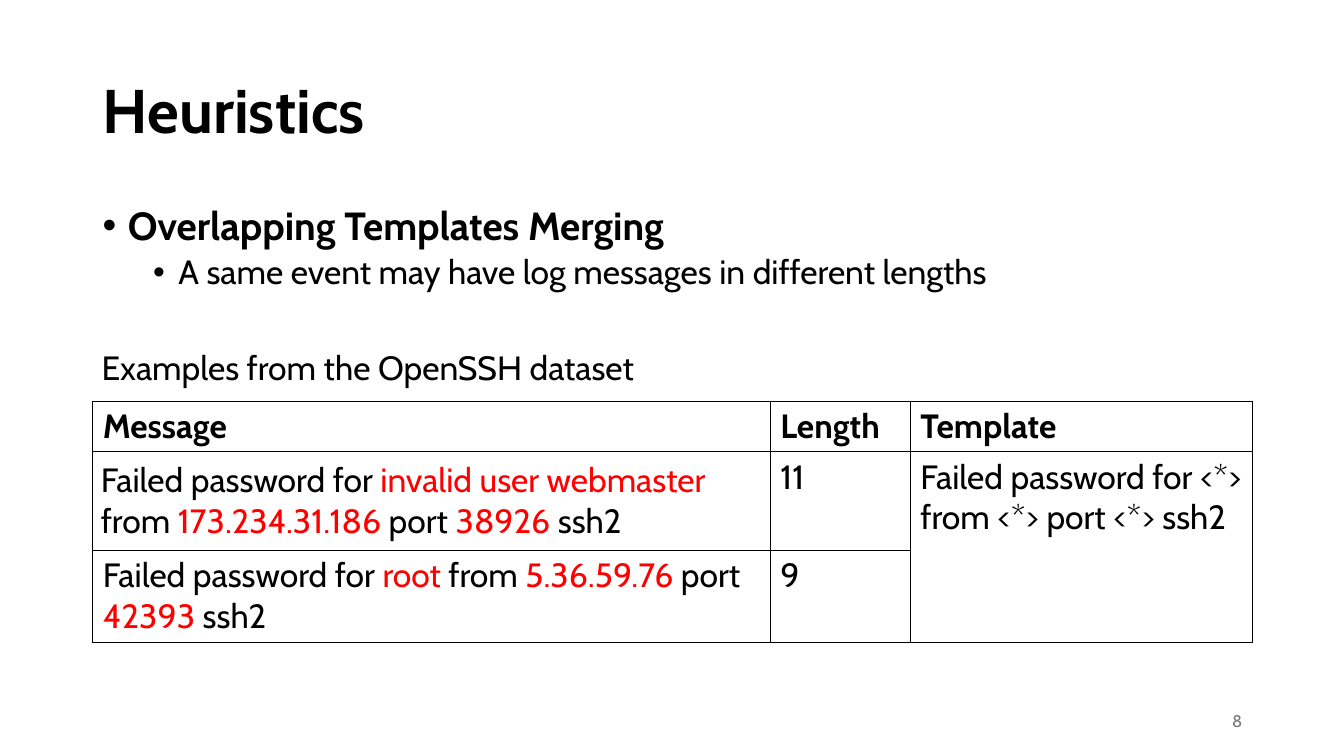
from dataclasses import dataclass

from lxml import etree
from pptx import Presentation
from pptx.dml.color import RGBColor
from pptx.enum.text import MSO_ANCHOR, PP_ALIGN
from pptx.oxml.ns import qn
from pptx.util import Inches, Pt

TOP, MIDDLE = MSO_ANCHOR.TOP, MSO_ANCHOR.MIDDLE
RIGHT = PP_ALIGN.RIGHT


@dataclass(frozen=True)
class Theme:
    font: str = "Cabin"
    text: str = "000000"
    variable: str = "FF0000"
    muted: str = "797979"
    border: str = "000000"
    title: int = 44
    heading: int = 28
    body: int = 24
    small: int = 12
    border_width: int = 1


THEME = Theme()
LEFT, CONTENT_WIDTH = 0.92, 11.5
COLUMN_WIDTHS = (6.72, 1.39, 3.39)
ROW_HEIGHTS = (0.5, 0.98, 0.91)
# Bars enclose the variable parts of a log message.
ROWS = (
    ("Message", "Length", "Template"),
    ("Failed password for |invalid user webmaster |from |173.234.31.186"
     "| port |38926| ssh2", "11",
     "Failed password for <*> from <*> port <*> ssh2"),
    ("Failed password for |root| from |5.36.59.76| port |42393| ssh2", "9", ""),
)


def style_font(font, size, color=THEME.text, bold=False):
    font.name = THEME.font
    font.size = Pt(size)
    font.bold = bold
    font.color.rgb = RGBColor.from_string(color)


def add_text(page, position, text, size, color=THEME.text, bold=False,
             anchor=TOP, align=None, wrap=True):
    box = page.shapes.add_textbox(*map(Inches, position))
    frame = box.text_frame
    frame.word_wrap = wrap
    frame.vertical_anchor = anchor
    frame.text = text
    para = frame.paragraphs[0]
    para.alignment = align
    style_font(para.runs[0].font, size, color, bold)
    return frame


def set_bullet(para, indent):
    properties = para._p.get_or_add_pPr()
    properties.set("marL", str(Inches(indent)))
    properties.set("indent", str(Inches(-0.25)))
    etree.SubElement(properties, qn("a:buFont"), typeface="Arial")
    etree.SubElement(properties, qn("a:buChar"), char="•")
    para.line_spacing = 0.9


def add_bullets(page):
    frame = add_text(page, (LEFT, 2, CONTENT_WIDTH, 1.3),
                     "Overlapping Templates Merging", THEME.heading, bold=True)
    set_bullet(frame.paragraphs[0], 0.25)
    para = frame.add_paragraph()
    para.text = "A same event may have log messages in different lengths"
    para.level = 1
    set_bullet(para, 0.75)
    para.space_before = Pt(5)
    style_font(para.runs[0].font, THEME.body)


def set_borders(cell):
    properties = cell._tc.get_or_add_tcPr()
    for index, side in enumerate(("lnL", "lnR", "lnT", "lnB")):
        line = etree.Element(qn(f"a:{side}"), w=str(Pt(THEME.border_width)))
        fill = etree.SubElement(line, qn("a:solidFill"))
        etree.SubElement(fill, qn("a:srgbClr"), val=THEME.border)
        properties.insert(index, line)


def fill_cell(cell, text, bold):
    para = cell.text_frame.paragraphs[0]
    for index, part in enumerate(text.split("|")):
        if part:
            run = para.add_run()
            run.text = part
            color = THEME.variable if index % 2 else THEME.text
            style_font(run.font, THEME.body, color, bold)
    cell.fill.background()
    set_borders(cell)


def add_message_table(page):
    position = (LEFT, 3.98, CONTENT_WIDTH, sum(ROW_HEIGHTS))
    table = page.shapes.add_table(len(ROWS), len(COLUMN_WIDTHS),
                                  *map(Inches, position)).table
    table.first_row = False
    table.horz_banding = False
    for column, width in zip(table.columns, COLUMN_WIDTHS):
        column.width = Inches(width)
    for row, height in zip(table.rows, ROW_HEIGHTS):
        row.height = Inches(height)
    for row_index, texts in enumerate(ROWS):
        for column_index, text in enumerate(texts):
            fill_cell(table.cell(row_index, column_index), text,
                      bold=row_index == 0)
    table.cell(1, 2).merge(table.cell(2, 2))
    long_message = table.cell(1, 0)
    long_message.vertical_anchor = MIDDLE
    long_message.margin_left = long_message.margin_right = Inches(0.08)
    long_message.margin_top = long_message.margin_bottom = Inches(0.08)


def main():
    deck = Presentation()
    deck.slide_width, deck.slide_height = Inches(13.33), Inches(7.5)
    page = deck.slides.add_slide(deck.slide_layouts[6])
    title = add_text(page, (LEFT, 0.4, CONTENT_WIDTH, 1.45), "Heuristics",
                     THEME.title, bold=True, anchor=MIDDLE)
    title.paragraphs[0].line_spacing = 0.9
    add_bullets(page)
    add_text(page, (9.42, 6.95, 3, 0.4), "8", THEME.small, THEME.muted,
             anchor=MIDDLE, align=RIGHT)
    add_message_table(page)
    add_text(page, (0.91, 3.39, 5.57, 0.5),
             "Examples from the OpenSSH dataset", THEME.body, wrap=False)
    deck.save("out.pptx")


if __name__ == "__main__":
    main()
